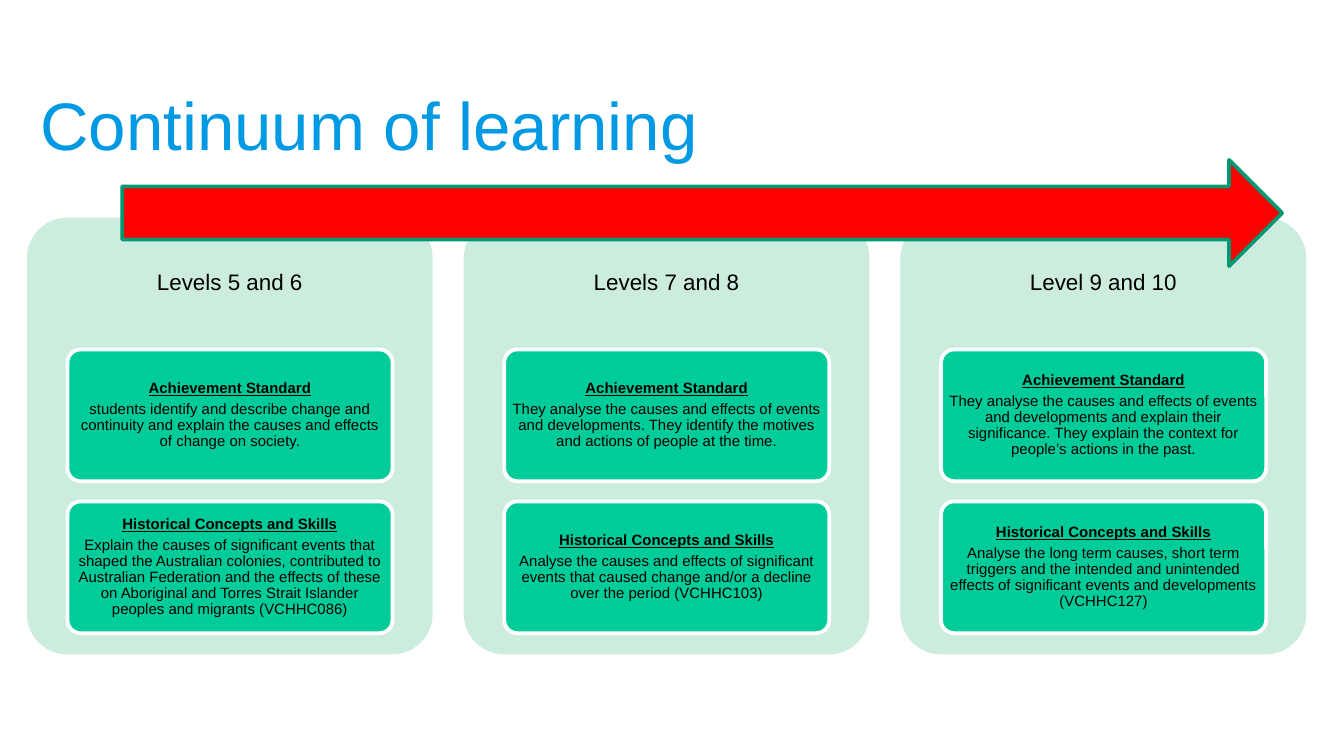
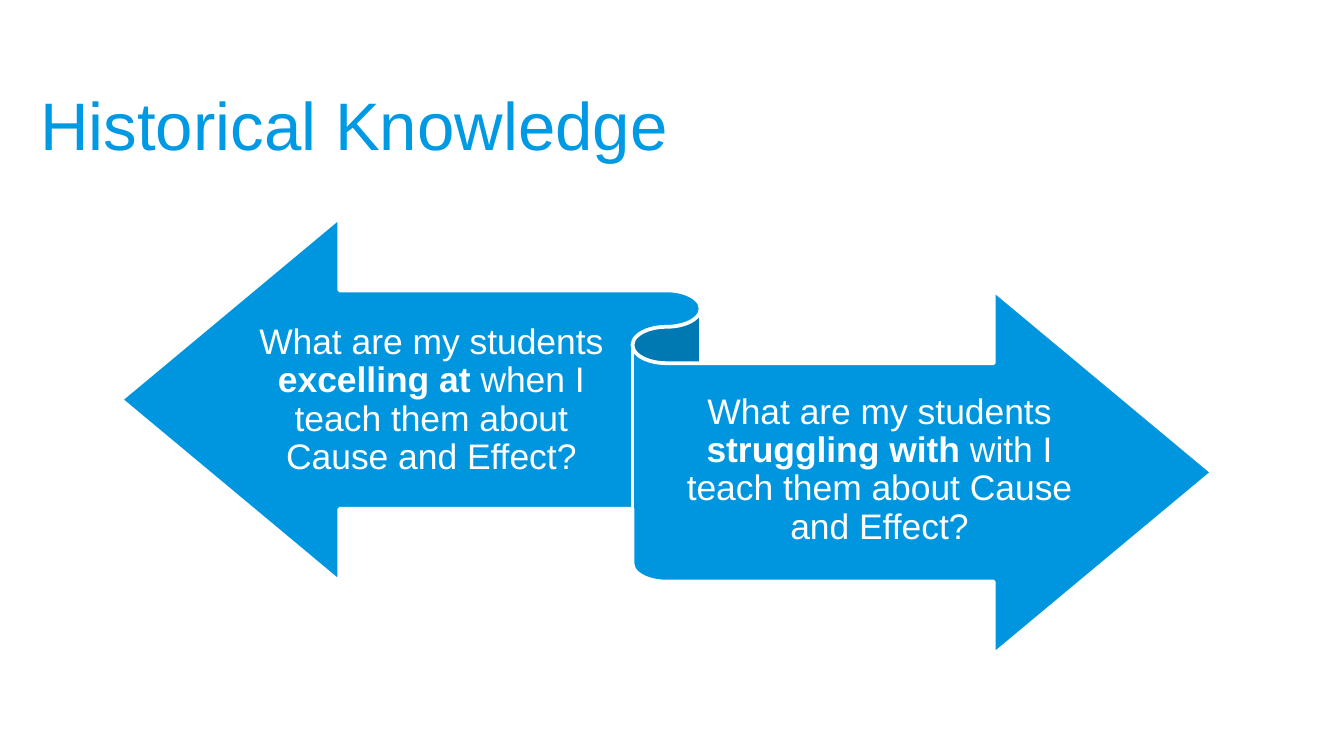
from pptx import Presentation
from pptx.dml.color import RGBColor
from pptx.enum.shapes import MSO_SHAPE
from pptx.enum.text import MSO_ANCHOR, PP_ALIGN
from pptx.util import Pt

HUES = {
    "title": "0099E3", "panel": "CCECDE", "box": "00CC99", "arrow": "FF0000",
    "edge": "009771", "ribbon": "0096DF", "white": "FFFFFF", "black": "000000",
}
HEAD = {"bold": True, "underline": True}
BOLD = {"bold": True}

# Each level: name, achievement standard, concepts and skills
LEVELS = [
    ("Levels 5 and 6",
     "students identify and describe change and continuity and explain the "
     "causes and effects of change on society.",
     "Explain the causes of significant events that shaped the Australian "
     "colonies, contributed to Australian Federation and the effects of these "
     "on Aboriginal and Torres Strait Islander peoples and migrants (VCHHC086)"),
    ("Levels 7 and 8",
     "They analyse the causes and effects of events and developments. They "
     "identify the motives and actions of people at the time.",
     "Analyse the causes and effects of significant events that caused change "
     "and/or a decline over the period (VCHHC103)"),
    ("Level 9 and 10",
     "They analyse the causes and effects of events and developments and "
     "explain their significance. They explain the context for people’s "
     "actions in the past.",
     "Analyse the long term causes, short term triggers and the intended and "
     "unintended effects of significant events and developments (VCHHC127)"),
]
TOPICS = ["Achievement Standard", "Historical Concepts and Skills"]

# Each side of the ribbon: position, stressed words, joining word
SIDES = [
    ((134.6, 157.7, 193, 114.5), "excelling at", "when"),
    ((357.1, 195.1, 228.2, 114.5), "struggling with", "with"),
]


def put(item, values):
    for name, value in values.items():
        setattr(item, name, value)


def hue(name):
    return RGBColor.from_string(HUES[name])


class Deck:
    """Holds the style and the current slide."""

    def __init__(self):
        self.show = Presentation()
        put(self.show, {"slide_width": Pt(720), "slide_height": Pt(405)})
        self.slide = None

    def page(self, title):
        self.slide = self.show.slides.add_slide(self.show.slide_layouts[5])
        shape = self.slide.shapes.title
        put(shape, {"left": Pt(14.4), "top": Pt(32.4),
                    "width": Pt(686), "height": Pt(67.7)})
        shape.text_frame.vertical_anchor = MSO_ANCHOR.MIDDLE
        para = shape.text_frame.paragraphs[0]
        para.alignment = PP_ALIGN.LEFT
        self.run(para, title, 36, "title")

    def run(self, para, text, size, color, style=None):
        run = para.add_run()
        run.text = text
        put(run.font, {"name": "Arial", "size": Pt(size), **(style or {})})
        run.font.color.rgb = hue(color)

    def fill(self, shape, paras, size, color, pads):
        """Write centred paragraphs, each a list of (text, style) runs."""
        frame = shape.text_frame
        sides = ("margin_left", "margin_top", "margin_right", "margin_bottom")
        put(frame, {"word_wrap": True, "vertical_anchor": MSO_ANCHOR.MIDDLE,
                    **{side: Pt(pad) for side, pad in zip(sides, pads)}})
        for i, runs in enumerate(paras):
            para = frame.add_paragraph() if i else frame.paragraphs[0]
            put(para, {"alignment": PP_ALIGN.CENTER, "line_spacing": 0.9,
                       "space_after": Pt(size * 0.35)})
            for text, style in runs:
                self.run(para, text, size, color, style)

    def shape(self, kind, at, color, edge=None, round=None):
        shape = self.slide.shapes.add_shape(kind, *map(Pt, at))
        shape.shadow.inherit = False
        shape.fill.solid()
        shape.fill.fore_color.rgb = hue(color)
        if edge:
            shape.line.color.rgb = hue(edge)
            shape.line.width = Pt(2)
        else:
            shape.line.fill.background()
        if round:
            shape.adjustments[0] = round
        return shape

    def label(self, at, paras, size, color, pads):
        box = self.slide.shapes.add_textbox(*map(Pt, at))
        self.fill(box, paras, size, color, pads)


def learning(deck):
    deck.page("Continuum of learning")
    top, wide = 116.6, 217.4
    for col, (name, *texts) in enumerate(LEVELS):
        left = 14.4 + col * 234
        # Panel and its heading
        deck.shape(MSO_SHAPE.ROUNDED_RECTANGLE, (left, top, wide, 234),
                   "panel", round=0.1)
        deck.label((left, top, wide, 70), [[(name, None)]], 12, "black",
                   [3.6] * 4)
        # Boxes stacked in the panel
        for row, (topic, text) in enumerate(zip(TOPICS, texts)):
            at = (left + 21.7, 187.2 + row * 81.4, 174.2, 70.6)
            box = deck.shape(MSO_SHAPE.ROUNDED_RECTANGLE, at, "box", "white",
                             round=0.1)
            deck.fill(box, [[(topic, HEAD)], [(text, None)]], 8, "black",
                      [1.44] * 4)
    # Arrow across the levels
    deck.shape(MSO_SHAPE.RIGHT_ARROW, (65.5, 85.7, 621.4, 56.9), "arrow",
               "edge")


def knowledge(deck):
    deck.page("Historical Knowledge")
    deck.shape(MSO_SHAPE.LEFT_RIGHT_RIBBON, (64.8, 116.6, 584.6, 234),
               "ribbon", "white")
    for at, stress, word in SIDES:
        runs = [("What are my students ", None), (stress, BOLD),
                (f" {word} I teach them about Cause and Effect?", None)]
        deck.label(at, [runs], 19, "white", (0, 5, 0, 5.8))


def main():
    deck = Deck()
    learning(deck)
    knowledge(deck)
    deck.show.save("out.pptx")


if __name__ == "__main__":
    main()
